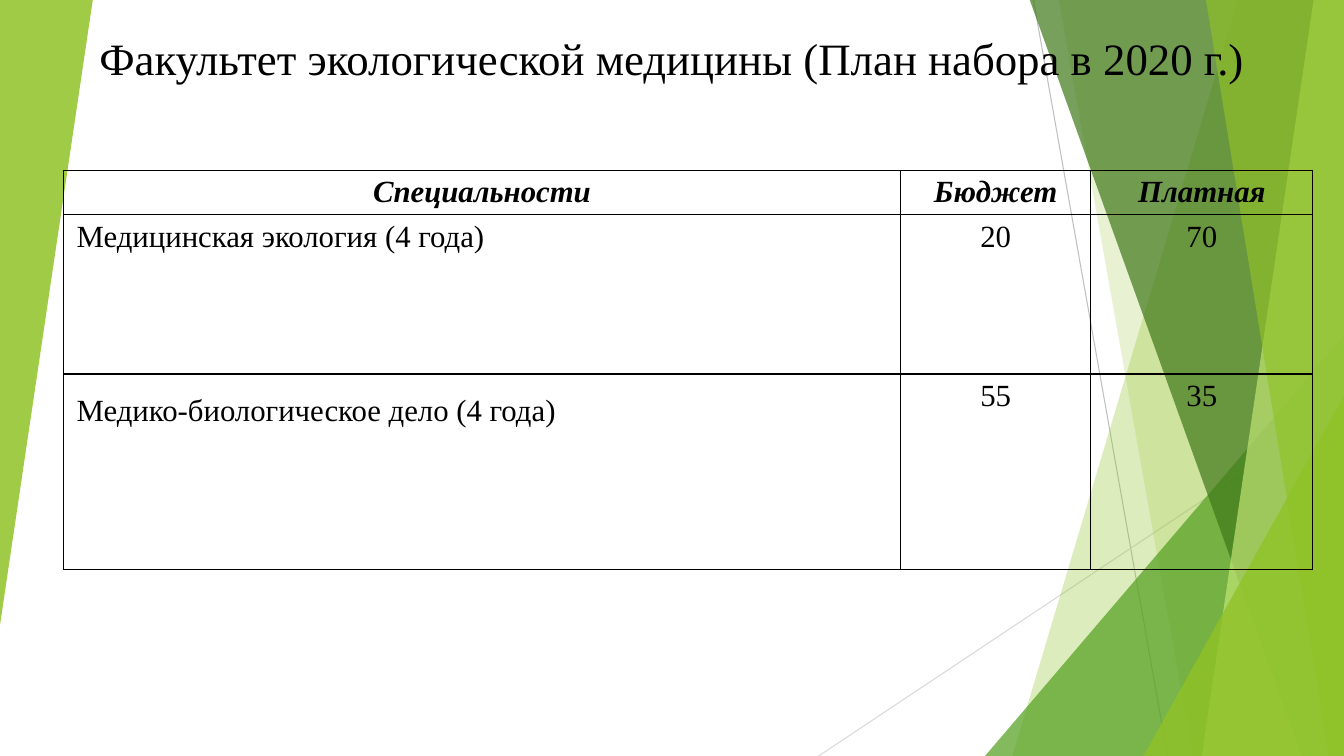
from lxml import etree
from pptx import Presentation
from pptx import util as u
from pptx.dml.color import RGBColor
from pptx.enum import shapes, text
from pptx.oxml import ns

SLIDE_W, SLIDE_H = 13.33, 7.5
BLEED_TOP = -0.01
FONT = "Times New Roman"

HEADING = "Факультет экологической медицины (План набора в 2020 г.)"
HEADERS = ("Специальности", "Бюджет", "Платная")
SPECIALTIES = [
    ("Медицинская экология (4 года)", "20", "70"),
    ("Медико-биологическое дело (4 года)", "55", "35"),
]
COLUMN_WIDTHS = (8.3, 1.89, 2.2)
ROW_HEIGHTS = (0.44, 1.58, 1.94)
TABLE_LEFT, TABLE_TOP = 0.63, 1.69
LAST_NAME_TOP = 0.2

RAYS = [
    ((10.25, 0), (11.58, SLIDE_H), "BFBFBF"),
    ((SLIDE_W, 4.03), (8.12, SLIDE_H), "D9D9D9"),
]
FACETS = [
    ("band", (12.28, 10.04), "90C226", 30),
    ("band", (10.5, 11.83), "90C226", 20),
    ("triangle", (9.77, 3.33, 3.56, 4.17, 0), "54A021", 72),
    ("band", (10.21, 12.91), "3F7819", 70),
    ("band", (13.03, 11.92), "C0E474", 70),
    ("band", (11.96, 13.18), "90C226", 65),
    ("triangle", (11.34, 3.93, 1.99, 3.57, 0), "90C226", 80),
    ("triangle", (0, 0, 0.92, 6.2, 180), "90C226", 85),
]


def color(hex_value):
    return RGBColor.from_string(hex_value)


def write(frame, content, size, bold=False, italic=False,
          align=text.PP_ALIGN.CENTER, anchor=text.MSO_ANCHOR.TOP):
    frame.word_wrap = True
    frame.vertical_anchor = anchor
    paragraph = frame.paragraphs[0]
    paragraph.alignment = align
    run = paragraph.add_run()
    run.text = content
    run.font.name = FONT
    run.font.size = u.Pt(size)
    run.font.bold = bold
    run.font.italic = italic
    run.font.color.rgb = color("000000")


def add_ray(slide, start, end, line_color):
    ray = slide.shapes.add_connector(
        shapes.MSO_CONNECTOR.STRAIGHT, *map(u.Inches, start + end))
    ray.line.color.rgb = color(line_color)
    ray.line.width = u.Pt(0.75)
    etree.SubElement(ray.element.spPr, ns.qn("a:effectLst"))


def add_band(slide, top_x, bottom_x):
    corners = [(top_x, BLEED_TOP), (SLIDE_W, BLEED_TOP),
               (SLIDE_W, SLIDE_H), (bottom_x, SLIDE_H)]
    points = [(u.Inches(x), u.Inches(y)) for x, y in corners]
    outline = slide.shapes.build_freeform(*points[0])
    outline.add_line_segments(points[1:], close=True)
    return outline.convert_to_shape()


def add_triangle(slide, left, top, width, height, rotation):
    triangle = slide.shapes.add_shape(
        shapes.MSO_SHAPE.ISOSCELES_TRIANGLE,
        *map(u.Inches, (left, top, width, height)))
    triangle.adjustments[0] = 1
    triangle.rotation = rotation
    return triangle


def add_facet(slide, kind, geometry, fill_color, opacity):
    build = {"band": add_band, "triangle": add_triangle}[kind]
    facet = build(slide, *geometry)
    facet.shadow.inherit = False
    facet.line.fill.background()
    facet.fill.solid()
    facet.fill.fore_color.rgb = color(fill_color)
    tint = facet.element.spPr.find(".//" + ns.qn("a:srgbClr"))
    etree.SubElement(tint, ns.qn("a:alpha"), val=str(opacity * 1000))


def add_borders(cell):
    properties = cell._tc.get_or_add_tcPr()
    for position, side in enumerate(("lnL", "lnR", "lnT", "lnB")):
        border = etree.Element(ns.qn("a:" + side), w=str(u.Pt(1)))
        fill = etree.SubElement(border, ns.qn("a:solidFill"))
        etree.SubElement(fill, ns.qn("a:srgbClr"), val="000000")
        properties.insert(position, border)


def add_admissions(slide):
    rows = [HEADERS] + SPECIALTIES
    admissions = slide.shapes.add_table(
        len(rows), len(HEADERS), u.Inches(TABLE_LEFT), u.Inches(TABLE_TOP),
        u.Inches(sum(COLUMN_WIDTHS)), u.Inches(sum(ROW_HEIGHTS))).table
    admissions.first_row = admissions.horz_banding = False
    for column, width in zip(admissions.columns, COLUMN_WIDTHS):
        column.width = u.Inches(width)
    for r, (values, height) in enumerate(zip(rows, ROW_HEIGHTS)):
        admissions.rows[r].height = u.Inches(height)
        for c, value in enumerate(values):
            cell = admissions.cell(r, c)
            is_header, is_name = r == 0, r > 0 and c == 0
            is_last_name = is_name and r == len(rows) - 1
            cell.margin_left = cell.margin_right = u.Inches(0.13)
            cell.margin_top = u.Inches(LAST_NAME_TOP if is_last_name else 0.05)
            cell.margin_bottom = u.Inches(0.05)
            cell.fill.background()
            add_borders(cell)
            align = text.PP_ALIGN.LEFT if is_name else text.PP_ALIGN.CENTER
            write(cell.text_frame, value, 22, bold=is_header,
                  italic=is_header, align=align)


def main():
    deck = Presentation()
    deck.slide_width, deck.slide_height = u.Inches(SLIDE_W), u.Inches(SLIDE_H)
    slide = deck.slides.add_slide(deck.slide_layouts[5])
    for ray in RAYS:
        add_ray(slide, *ray)
    for facet in FACETS:
        add_facet(slide, *facet)

    heading = slide.shapes.title
    heading.left, heading.top = u.Inches(0), u.Inches(0.21)
    heading.width, heading.height = u.Inches(SLIDE_W), u.Inches(0.68)
    write(heading.text_frame, HEADING, 32, anchor=text.MSO_ANCHOR.BOTTOM)
    heading.element.getparent().append(heading.element)

    add_admissions(slide)
    deck.save("out.pptx")


if __name__ == "__main__":
    main()
